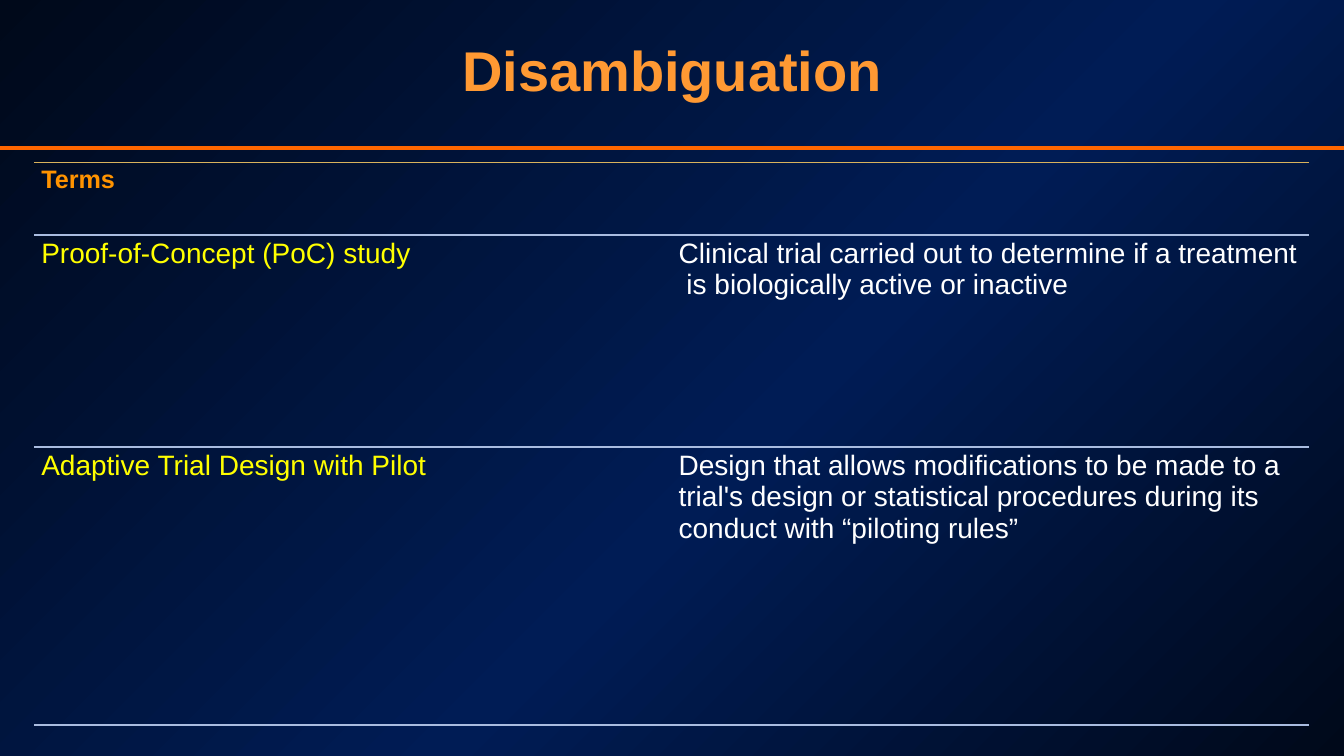
import pptx
import pptx.dml.color
import pptx.enum.shapes
import pptx.enum.text
import pptx.oxml
import pptx.oxml.ns
import pptx.util
from dataclasses import dataclass

Pt = pptx.util.Pt

TITLE = "Disambiguation"
HEADER = ("Terms", "")
DEFINITIONS = [
    ("Proof-of-Concept (PoC) study",
     "Clinical trial carried out to determine if a treatment  is biologically active or inactive"),
    ("Adaptive Trial Design with Pilot",
     "Design that allows modifications to be made to a trial's design or statistical "
     "procedures during its conduct with “piloting rules”"),
]


@dataclass(frozen=True)
class Theme:
    font: str = "Arial"
    title: str = "FF9933"
    rule: str = "FF6600"
    header: str = "FF9300"
    term: str = "FFFF00"
    definition: str = "FFFFFF"
    top_border: str = "D8B25C"
    row_border: str = "A9BCE0"
    gradient: tuple = ((0, "00091A"), (57, "001C55"), (100, "00091A"))
    gradient_angle: int = 45
    title_size: int = 40
    header_size: int = 18
    body_size: int = 20


THEME = Theme()
PAGE_WIDTH, PAGE_HEIGHT = 960, 540
TITLE_TOP, TITLE_HEIGHT = 21.6, 55.4
RULE_Y = 105.8
TABLE_LEFT, TABLE_TOP = 24.5, 115.9
COLUMN_WIDTH = 455.3
ROW_HEIGHTS = (52, 151.4, 198.6)
INSET_X, INSET_Y = 5, 2.4
NO_TABLE_STYLE = "{2D5ABB26-0587-4C30-8999-92F81FD0307C}"
NAMESPACE = pptx.oxml.ns.nsdecls("a")


def rgb(color):
    return pptx.dml.color.RGBColor.from_string(color)


def style_paragraph(para, size, color, bold):
    para.font.name = THEME.font
    para.font.size = Pt(size)
    para.font.bold = bold
    para.font.color.rgb = rgb(color)


def paint_background(page):
    fill = page.background.fill
    fill.gradient()
    gradient = page.background._cSld.find(".//" + pptx.oxml.ns.qn("a:gradFill"))
    stops = "".join(
        f'<a:gs pos="{percent * 1000}"><a:srgbClr val="{color}"/></a:gs>'
        for percent, color in THEME.gradient)
    gradient.getparent().replace(gradient, pptx.oxml.parse_xml(
        f'<a:gradFill {NAMESPACE} rotWithShape="1"><a:gsLst>{stops}</a:gsLst>'
        f'<a:lin ang="{THEME.gradient_angle * 60000}" scaled="0"/></a:gradFill>'))


def add_title(page):
    title = page.shapes.title
    title.left, title.top = Pt(0), Pt(TITLE_TOP)
    title.width, title.height = Pt(PAGE_WIDTH), Pt(TITLE_HEIGHT)
    frame = title.text_frame
    frame.text = TITLE
    frame.vertical_anchor = pptx.enum.text.MSO_ANCHOR.MIDDLE
    para = frame.paragraphs[0]
    para.alignment = pptx.enum.text.PP_ALIGN.CENTER
    style_paragraph(para, THEME.title_size, THEME.title, True)


def add_rule(page):
    rule = page.shapes.add_connector(
        pptx.enum.shapes.MSO_CONNECTOR.STRAIGHT,
        Pt(0), Pt(RULE_Y), Pt(PAGE_WIDTH), Pt(RULE_Y))
    rule.line.color.rgb = rgb(THEME.rule)
    rule.line.width = Pt(3)
    rule._element.spPr.append(pptx.oxml.parse_xml(f"<a:effectLst {NAMESPACE}/>"))


def set_borders(cell, top, bottom):
    """Draw the horizontal borders and hide the vertical ones."""
    properties = cell._tc.get_or_add_tcPr()
    sides = (("lnL", None), ("lnR", None), ("lnT", top), ("lnB", bottom))
    for position, (side, color) in enumerate(sides):
        paint = (f'<a:solidFill><a:srgbClr val="{color}"/></a:solidFill>'
                 if color else "<a:noFill/>")
        properties.insert(position, pptx.oxml.parse_xml(
            f'<a:{side} {NAMESPACE} w="{Pt(1)}">{paint}</a:{side}>'))


def add_terms_table(page):
    rows = [HEADER] + DEFINITIONS
    shape = page.shapes.add_table(
        len(rows), len(HEADER), Pt(TABLE_LEFT), Pt(TABLE_TOP),
        Pt(COLUMN_WIDTH * len(HEADER)), Pt(sum(ROW_HEIGHTS)))
    table = shape.table
    table.horz_banding = False
    table._tbl.tblPr.find(pptx.oxml.ns.qn("a:tableStyleId")).text = NO_TABLE_STYLE
    for column in table.columns:
        column.width = Pt(COLUMN_WIDTH)
    for row_index, texts in enumerate(rows):
        table.rows[row_index].height = Pt(ROW_HEIGHTS[row_index])
        is_header = row_index == 0
        size = THEME.header_size if is_header else THEME.body_size
        colors = (THEME.header,) * 2 if is_header else (THEME.term, THEME.definition)
        top = THEME.top_border if is_header else THEME.row_border
        for column_index, (text, color) in enumerate(zip(texts, colors)):
            cell = table.cell(row_index, column_index)
            cell.text = text
            cell.margin_left = cell.margin_right = Pt(INSET_X)
            cell.margin_top = cell.margin_bottom = Pt(INSET_Y)
            cell.vertical_anchor = pptx.enum.text.MSO_ANCHOR.TOP
            cell.fill.background()
            set_borders(cell, top, THEME.row_border)
            style_paragraph(cell.text_frame.paragraphs[0], size, color, is_header)


def main():
    deck = pptx.Presentation()
    deck.slide_width, deck.slide_height = Pt(PAGE_WIDTH), Pt(PAGE_HEIGHT)
    page = deck.slides.add_slide(deck.slide_layouts.get_by_name("Title Only"))
    paint_background(page)
    add_rule(page)
    add_title(page)
    add_terms_table(page)
    deck.save("out.pptx")


if __name__ == "__main__":
    main()
